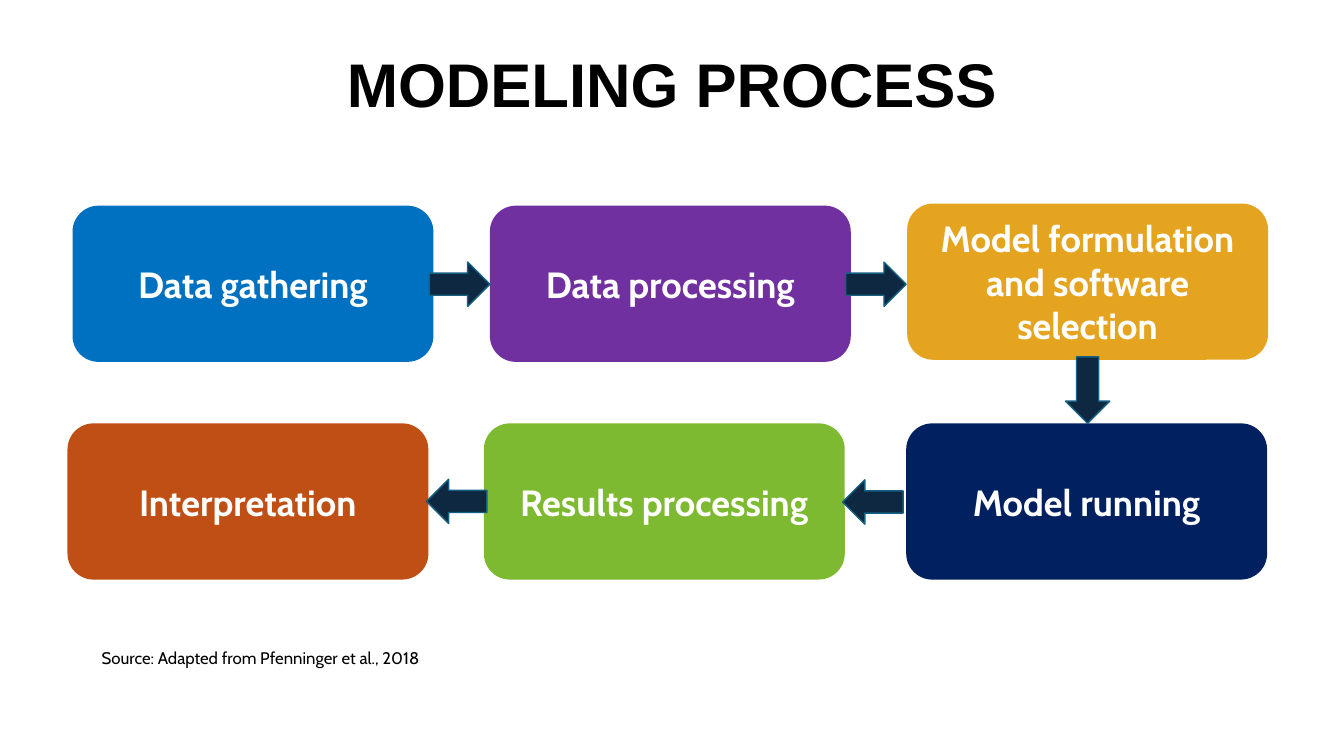
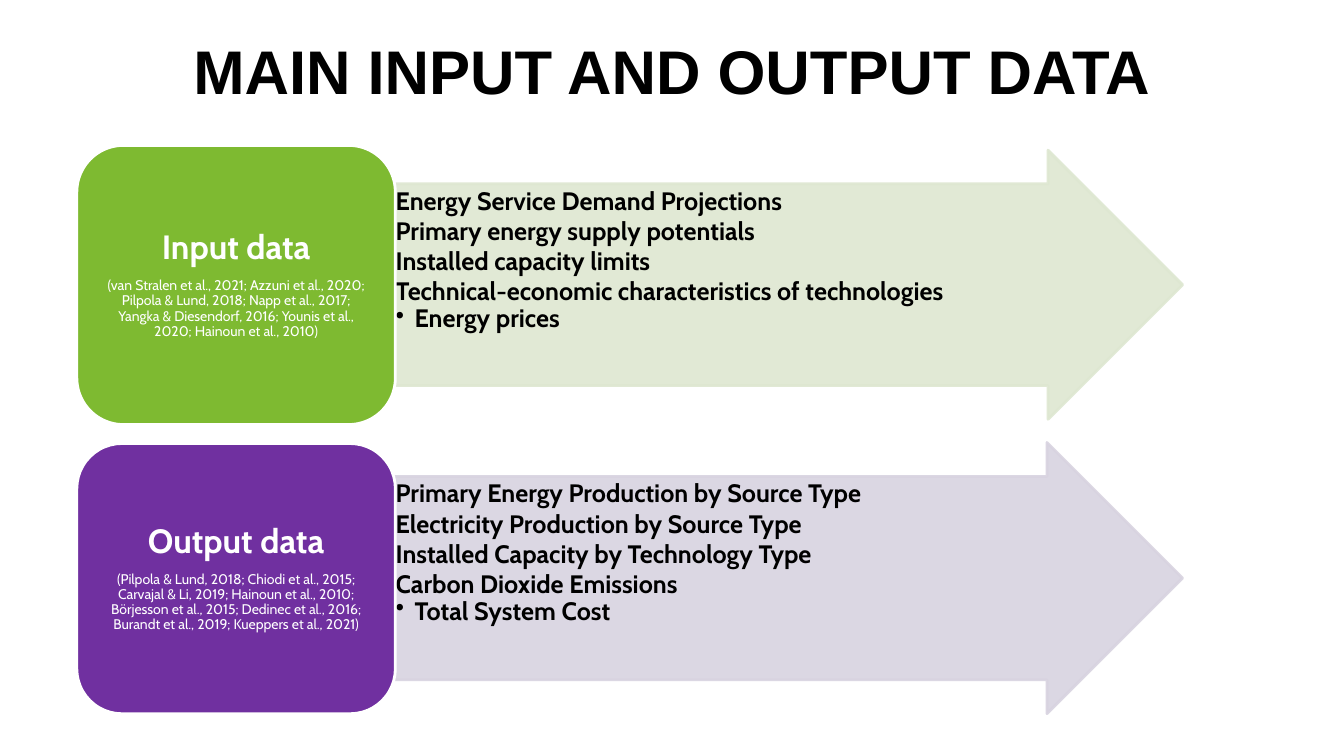
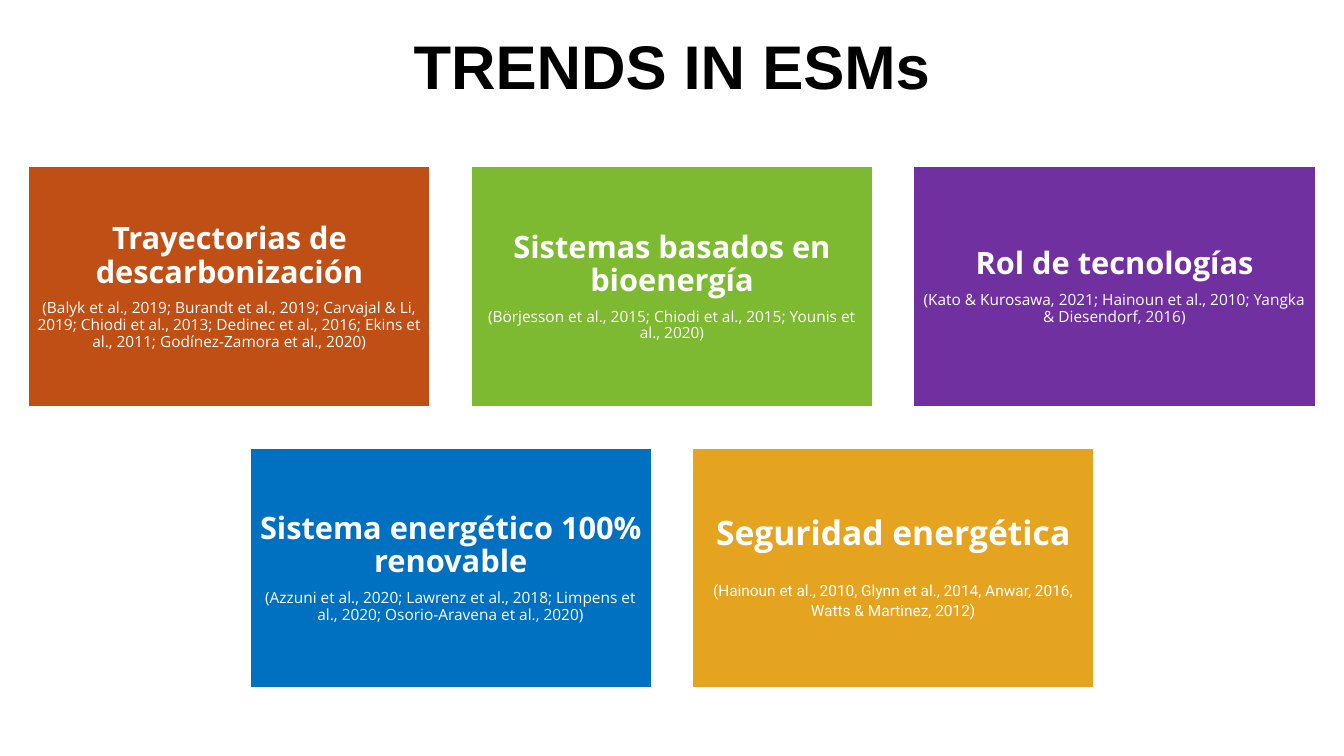
"""Build three slides on energy system modelling."""
from dataclasses import dataclass
from typing import NamedTuple

from lxml import etree
from pptx import Presentation
from pptx.dml.color import RGBColor
from pptx.enum.shapes import MSO_SHAPE
from pptx.enum.text import MSO_ANCHOR, MSO_AUTO_SIZE, PP_ALIGN
from pptx.oxml.ns import qn
from pptx.util import Pt

ARROW, RECT, ROUND = MSO_SHAPE.RIGHT_ARROW, MSO_SHAPE.RECTANGLE, MSO_SHAPE.ROUNDED_RECTANGLE
LEFT, CENTER = PP_ALIGN.LEFT, PP_ALIGN.CENTER
TOP, MIDDLE = MSO_ANCHOR.TOP, MSO_ANCHOR.MIDDLE
FIXED = MSO_AUTO_SIZE.NONE

WIDE, HIGH = 960, 540
TITLE_ONLY = 5
SIDES = ("margin_left", "margin_top", "margin_right", "margin_bottom")
BLACK, WHITE = "000000", "FFFFFF"
BLUE, PURPLE, GOLD = "0070C0", "7030A0", "E5A420"
NAVY, GREEN, RUST = "002060", "7EBA31", "C04F15"
INK, TEAL, SAGE, LILAC = "0E2841", "156082", "DEE7D1", "D8D3E0"


class Box(NamedTuple):
    """Place and size in points."""
    left: float
    top: float
    width: float
    height: float


@dataclass(frozen=True)
class Para:
    """One paragraph with its format."""
    text: str
    size: float
    face: str = "Cabin"
    color: str = WHITE
    bold: bool = True
    align: int = CENTER
    line: float = 1.0
    after: float = 0
    bullet: bool = False


@dataclass(frozen=True)
class Step:
    """One step of the process."""
    text: str
    fill: str
    left: float
    top: float


@dataclass(frozen=True)
class Flow:
    """A labelled box with an arrow that lists its data."""
    name: str
    refs: str
    items: tuple
    fill: str
    tint: str
    card: Box
    arrow: Box


@dataclass(frozen=True)
class Trend:
    """One research trend with its sources."""
    name: str
    refs: str
    fill: str
    size: float = 22
    face: str = "Open Sans"
    line: float = 0.9
    after: float = 7.7


STEPS = (
    Step("Data gathering", BLUE, 51.8, 146.9),
    Step("Data processing", PURPLE, 349.9, 146.9),
    Step("Model formulation and software selection", GOLD, 648, 145.4),
    Step("Model running", NAVY, 647.3, 302.4),
    Step("Results processing", GREEN, 345.6, 302.4),
    Step("Interpretation", RUST, 48.2, 302.4),
)
LINKS = (
    (Box(306.7, 187.2, 43.2, 31.7), 0),
    (Box(604.1, 187.2, 43.2, 31.7), 0),
    (Box(753.1, 262.8, 47.5, 31.7), 90),
    (Box(601.9, 342.7, 43.2, 31.7), 180),
    (Box(304.6, 342.3, 43.2, 31.7), 180),
)
FLOWS = (
    Flow("Input data",
         "(van Stralen et al., 2021; Azzuni et al., 2020; Pilpola & Lund, 2018; "
         "Napp et al., 2017; Yangka & Diesendorf, 2016; Younis et al., 2020; "
         "Hainoun et al., 2010)",
         ("Energy Service Demand Projections", "Primary energy supply potentials",
          "Installed capacity limits",
          "Technical-economic characteristics of technologies", "Energy prices"),
         GREEN, SAGE, Box(54.9, 103.9, 227.5, 199.4), Box(281.7, 107.3, 563, 192.2)),
    Flow("Output data",
         "(Pilpola & Lund, 2018; Chiodi et al., 2015; Carvajal & Li, 2019; "
         "Hainoun et al., 2010; Börjesson et al., 2015; Dedinec et al., 2016; "
         "Burandt et al., 2019; Kueppers et al., 2021)",
         ("Primary Energy Production by Source Type",
          "Electricity Production by Source Type",
          "Installed Capacity by Technology Type",
          "Carbon Dioxide Emissions", "Total System Cost"),
         PURPLE, LILAC, Box(54.9, 316.8, 227.5, 193), Box(281.7, 316.1, 563, 193.7)),
)
TRENDS = (
    (Trend("Trayectorias de descarbonización",
           "(Balyk et al., 2019; Burandt et al., 2019; Carvajal & Li, 2019; "
           "Chiodi et al., 2013; Dedinec et al., 2016; Ekins et al., 2011; "
           "Godínez-Zamora et al., 2020)", RUST),
     Trend("Sistemas basados en bioenergía",
           "(Börjesson et al., 2015; Chiodi et al., 2015; Younis et al., 2020)", GREEN),
     Trend("Rol de tecnologías",
           "(Kato & Kurosawa, 2021; Hainoun et al., 2010; Yangka & Diesendorf, 2016)",
           PURPLE)),
    (Trend("Sistema energético 100% renovable",
           "(Azzuni et al., 2020; Lawrenz et al., 2018; Limpens et al., 2020; "
           "Osorio-Aravena et al., 2020)", BLUE),
     Trend("Seguridad energética",
           "(Hainoun et al., 2010, Glynn et al., 2014, Anwar, 2016, "
           "Watts & Martinez, 2012)", GOLD, 24, "Roboto", 1.07, 19.5)),
)


def tone(color: str) -> RGBColor:
    """Turn a hex string into a colour."""
    return RGBColor.from_string(color)


def apply(target, values: dict) -> None:
    """Set each named value on the target."""
    for name, value in values.items():
        setattr(target, name, value)


def place(shape, box: Box) -> None:
    """Move and size a shape."""
    apply(shape, {name: Pt(value) for name, value in box._asdict().items()})


def write(shape, paras: list, anchor=MIDDLE, inset=(7.2, 3.6, 7.2, 3.6)) -> None:
    """Fill a shape with formatted paragraphs."""
    frame = shape.text_frame
    apply(frame, {"word_wrap": True, "auto_size": FIXED, "vertical_anchor": anchor})
    apply(frame, {side: Pt(value) for side, value in zip(SIDES, inset)})
    for index, item in enumerate(paras):
        para = frame.add_paragraph() if index else frame.paragraphs[0]
        apply(para, {"alignment": item.align, "line_spacing": item.line,
                     "space_before": Pt(0), "space_after": Pt(item.after)})
        run = para.add_run()
        run.text = item.text
        apply(run.font, {"name": item.face, "size": Pt(item.size), "bold": item.bold})
        run.font.color.rgb = tone(item.color)
        if item.bullet:
            props = para._p.get_or_add_pPr()
            props.set("marL", str(Pt(13.5)))
            props.set("indent", str(-Pt(13.5)))
            etree.SubElement(props, qn("a:buChar")).set("char", "•")


def draw(slide, kind, box: Box, fill: str, edge: str = "", width: float = 1):
    """Add a filled preset shape, outlined if an edge colour is given."""
    shape = slide.shapes.add_shape(kind, *map(Pt, box))
    shape.shadow.inherit = False
    shape.fill.solid()
    shape.fill.fore_color.rgb = tone(fill)
    if edge:
        shape.line.color.rgb = tone(edge)
        shape.line.width = Pt(width)
    else:
        shape.line.fill.background()
    return shape


def fade(shape, share: int) -> None:
    """Make the fill and line partly opaque, in percent."""
    for color in shape.element.spPr.iter(qn("a:srgbClr")):
        etree.SubElement(color, qn("a:alpha")).set("val", str(share * 1000))


def start(deck, text: str, top: float):
    """Add a slide with the shared title style."""
    slide = deck.slides.add_slide(deck.slide_layouts[TITLE_ONLY])
    title = slide.shapes.title
    place(title, Box(95, top, 770.4, 46))
    write(title, [Para(text, 44, "Arial", BLACK)], TOP, (7.2, 8, 7.2, 3.6))
    return slide


def process(deck) -> None:
    """Build the modelling process slide."""
    slide = start(deck, "MODELING PROCESS", 24.5)
    source = slide.shapes.add_textbox(*map(Pt, Box(65.5, 457.9, 360, 21.6)))
    write(source, [Para("Source: Adapted from Pfenninger et al., 2018", 12,
                        color=BLACK, bold=False, align=LEFT, line=1.07)], TOP)
    for step in STEPS:
        card = draw(slide, ROUND, Box(step.left, step.top, 257.8, 111.6), step.fill)
        write(card, [Para(step.text, 26)])
    for box, turn in LINKS:
        draw(slide, ARROW, box, INK, TEAL).rotation = turn


def data(deck) -> None:
    """Build the input and output slide."""
    slide = start(deck, "MAIN INPUT AND OUTPUT DATA", 15.8)
    for flow in FLOWS:
        arrow = draw(slide, ARROW, flow.arrow, flow.tint, flow.tint, 2)
        arrow.adjustments[0] = 0.75
        fade(arrow, 90)
        *plain, last = flow.items
        look = {"size": 18, "color": BLACK, "align": LEFT}
        paras = [Para(text, **look) for text in plain]
        paras.append(Para(last, line=0.9, bullet=True, **look))
        write(arrow, paras, TOP, (0.9,) * 4)
        card = draw(slide, ROUND, flow.card, flow.fill, WHITE, 2)
        write(card, [Para(flow.name, 24, line=0.9, after=8.4),
                     Para(flow.refs, 10, bold=False, line=0.9, after=3.5)])


def trends(deck) -> None:
    """Build the trends slide as centred rows of cards."""
    slide = start(deck, "TRENDS IN ESMs", 12.2)
    width, height, gap = 287.3, 172.1, 28.8
    for row, group in enumerate(TRENDS):
        count = len(group)
        left = (WIDE - count * width - (count - 1) * gap) / 2
        top = 118.8 + row * (height + gap)
        for col, trend in enumerate(group):
            box = Box(left + col * (width + gap), top, width, height)
            card = draw(slide, RECT, box, trend.fill, WHITE, 1.5)
            write(card, [
                Para(trend.name, trend.size, "Open Sans", line=0.9, after=trend.after),
                Para(trend.refs, 11, trend.face, bold=False, line=trend.line, after=3.9),
            ], inset=(6.5,) * 4)


def main() -> None:
    """Build and save the deck."""
    deck = Presentation()
    apply(deck, {"slide_width": Pt(WIDE), "slide_height": Pt(HIGH)})
    for build in (process, data, trends):
        build(deck)
    deck.save("out.pptx")


if __name__ == "__main__":
    main()
